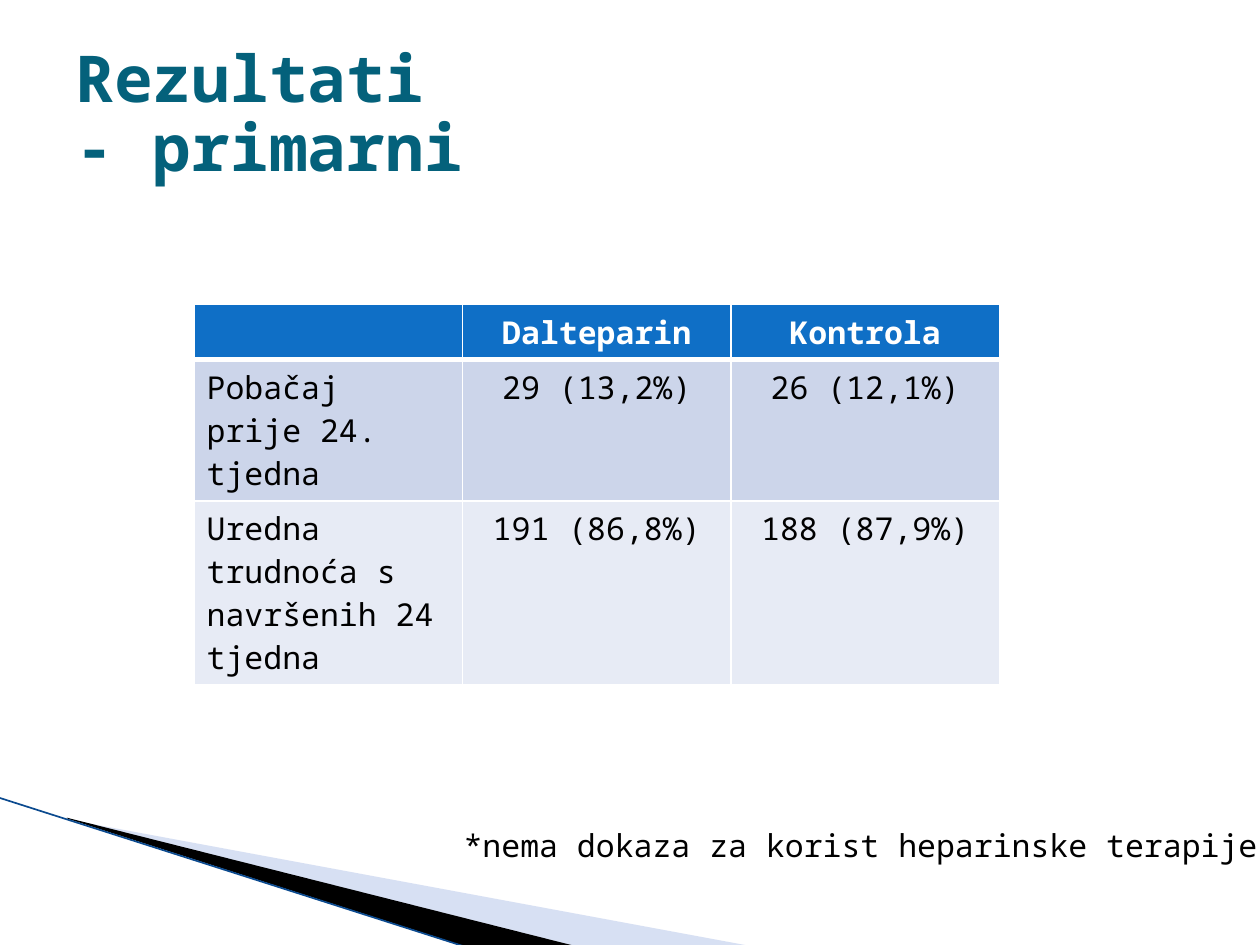
from lxml.etree import SubElement
from pptx import Presentation
from pptx.dml.color import RGBColor
from pptx.enum.shapes import MSO_CONNECTOR
from pptx.enum.text import MSO_ANCHOR, PP_ALIGN
from pptx.oxml import parse_xml
from pptx.oxml.ns import nsdecls, qn
from pptx.util import Pt

FONT = "Noto Sans Mono"


def color(value):
    return RGBColor.from_string(value)


def style(paragraph, size, value, bold=False):
    paragraph.font.name = FONT
    paragraph.font.size = Pt(size)
    paragraph.font.bold = bold
    paragraph.font.color.rgb = color(value)


deck = Presentation()
deck.slide_width, deck.slide_height = Pt(720), Pt(540)
page = deck.slides.add_slide(deck.slide_layouts[6])

# Corner wedges
wedges = [
    ("9DB2E1", 40, [(39.6, 468.5), (428.4, 540.5), (328.3, 540.5), (39.6, 468)]),
    ("000000", 100, [(38.2, 467.3), (329, 540.7), (267.8, 541.4), (38.9, 468)]),
]
for fill, opacity, points in wedges:
    corners = [(Pt(x), Pt(y)) for x, y in points]
    builder = page.shapes.build_freeform(*corners[0])
    builder.add_line_segments(corners[1:], close=True)
    wedge = builder.convert_to_shape()
    wedge.shadow.inherit = False
    wedge.fill.solid()
    wedge.fill.fore_color.rgb = color(fill)
    wedge.line.fill.background()
    if opacity < 100:
        tint = wedge.fill._xPr.find(qn("a:solidFill"))[0]
        SubElement(tint, qn("a:alpha"), val=str(opacity * 1000))

# Edge line along the wedges
edge = page.shapes.add_connector(
    MSO_CONNECTOR.STRAIGHT, Pt(-0.7), Pt(455.8), Pt(267.1), Pt(541.4))
edge.line.color.rgb = color("0B4A8F")
edge.line.width = Pt(0.95)
SubElement(edge._element.spPr, qn("a:effectLst"))

# Results table
rows = [
    ("", "Dalteparin", "Kontrola"),
    ("Pobačaj prije 24. tjedna", "29 (13,2%)", "26 (12,1%)"),
    ("Uredna trudnoća s navršenih 24 tjedna", "191 (86,8%)", "188 (87,9%)"),
]
row_fills = ["0F6FC6", "CCD5EA", "E7EBF5"]
table = page.shapes.add_table(
    3, 3, Pt(110.9), Pt(173.8), Pt(460.2), Pt(87.6)).table
for column in table.columns:
    column.width = Pt(153.4)
for r, texts in enumerate(rows):
    table.rows[r].height = Pt(29.2)
    for c, text in enumerate(texts):
        cell = table.cell(r, c)
        cell.text = text
        paragraph = cell.text_frame.paragraphs[0]
        paragraph.alignment = PP_ALIGN.CENTER if c else PP_ALIGN.LEFT
        style(paragraph, 18, "000000" if r else "FFFFFF", bold=r == 0)
        # White borders, thicker below the header
        properties = cell._tc.get_or_add_tcPr()
        for side in "LRTB":
            width = 3 if (r, side) in [(0, "B"), (1, "T")] else 1
            properties.append(parse_xml(
                f'<a:ln{side} {nsdecls("a")} w="{Pt(width)}"><a:solidFill>'
                f'<a:srgbClr val="FFFFFF"/></a:solidFill></a:ln{side}>'))
        cell.fill.solid()
        cell.fill.fore_color.rgb = color(row_fills[r])

# Title
title = page.shapes.add_textbox(Pt(36), Pt(21.6), Pt(648), Pt(90)).text_frame
title.word_wrap = True
title.vertical_anchor = MSO_ANCHOR.MIDDLE
heading = title.paragraphs[0]
heading.text = "Rezultati\v- primarni"
heading.line_spacing = 0.88
style(heading, 36.9, "04617B", bold=True)

# Footnote
note = page.shapes.add_textbox(Pt(257.8), Pt(468.7), Pt(527), Pt(28.8)).text_frame
note.word_wrap = True
note.text = "*nema dokaza za korist heparinske terapije"
style(note.paragraphs[0], 18, "000000")

deck.save("out.pptx")
